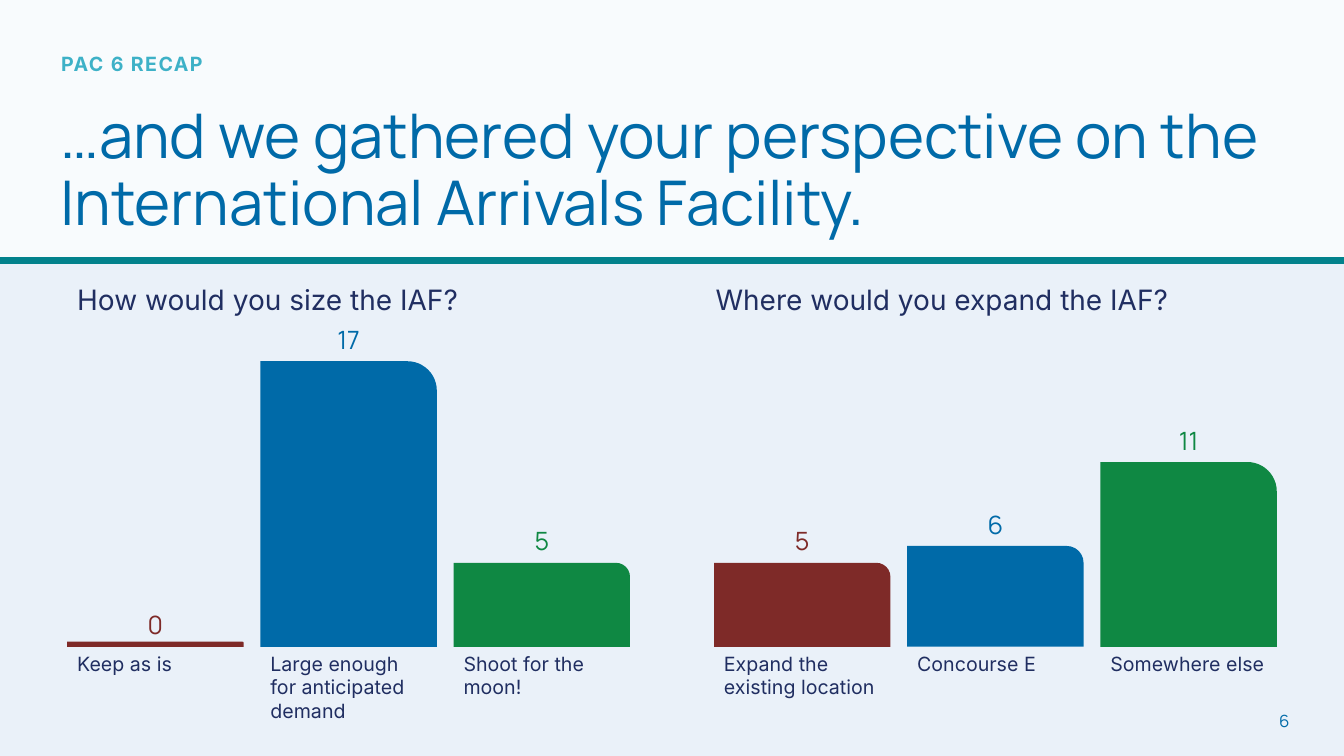
from dataclasses import dataclass

import lxml.etree
import pptx
import pptx.dml.color
import pptx.enum.shapes
import pptx.enum.text
import pptx.oxml
import pptx.oxml.ns
import pptx.util

COLORS = {
    "white": "FEFFFF", "panel": "EAF1F9", "teal": "02828C", "aqua": "3DB1C7",
    "navy": "202E61", "red": "7E2A28", "blue": "006AA8", "green": "0F8843",
}
SHAPE = pptx.enum.shapes.MSO_SHAPE
ALIGN = pptx.enum.text.PP_ALIGN
ANCHOR = pptx.enum.text.MSO_ANCHOR
COLS, ROWS = 160, 90
CELL = pptx.util.Inches(1) / 12
DIVIDER_ROW = 31
HEADING_ROW = 33
BASE_ROW = 77
BAR_COLS = 21
BAR_STEP = 23
ROWS_PER_VOTE = 2
MIN_BAR_ROWS = 0.6
VALUE_GAP = 5
LABEL_PAD, LABEL_LINE = 1.2, 2.84


@dataclass(frozen=True)
class Box:
    col: float
    row: float
    cols: float
    rows: float

    def emu(self) -> tuple[int, ...]:
        return tuple(round(n * CELL) for n in (self.col, self.row, self.cols, self.rows))


@dataclass(frozen=True)
class Style:
    size: int
    font: str
    color: str
    align: ALIGN = ALIGN.LEFT
    bold: bool = False
    line_spacing: float = 1.0
    tracking: int = 0
    grow: bool = False
    anchor: ANCHOR = ANCHOR.TOP


@dataclass(frozen=True)
class Bar:
    label: str
    label_lines: int
    votes: int
    color: str


@dataclass(frozen=True)
class Poll:
    question: str
    heading_col: int
    first_col: int
    bars: tuple[Bar, ...]


POLLS = (
    Poll("How would you size the IAF?", 8, 8, (
        Bar("Keep as is", 1, 0, "red"),
        Bar("Large enough for anticipated demand", 3, 17, "blue"),
        Bar("Shoot for the moon!", 2, 5, "green"),
    )),
    Poll("Where would you expand the IAF?", 84, 85, (
        Bar("Expand the existing location", 2, 5, "red"),
        Bar("Concourse E", 1, 6, "blue"),
        Bar("Somewhere else", 1, 11, "green"),
    )),
)


def rgb(name: str) -> pptx.dml.color.RGBColor:
    return pptx.dml.color.RGBColor.from_string(COLORS[name])


def add_block(slide, kind: SHAPE, box: Box, color: str, alpha: int = 100) -> None:
    sp = slide.shapes.add_shape(kind, *box.emu())
    sp.shadow.inherit = False
    sp.line.fill.background()
    sp.fill.solid()
    sp.fill.fore_color.rgb = rgb(color)
    if alpha < 100:
        clr = sp.fill._xPr.find(".//" + pptx.oxml.ns.qn("a:srgbClr"))
        lxml.etree.SubElement(clr, pptx.oxml.ns.qn("a:alpha"), val=str(alpha * 1000))


def add_text(slide, box: Box, text: str, style: Style) -> None:
    tf = slide.shapes.add_textbox(*box.emu()).text_frame
    tf.word_wrap = True
    tf.vertical_anchor = style.anchor
    if style.grow:
        tf.auto_size = pptx.enum.text.MSO_AUTO_SIZE.SHAPE_TO_FIT_TEXT
    tf.text = text
    p = tf.paragraphs[0]
    p.alignment = style.align
    p.line_spacing = style.line_spacing
    r = p.runs[0]
    r.font.size = pptx.util.Pt(style.size)
    r.font.name = style.font
    r.font.bold = style.bold
    r.font.color.rgb = rgb(style.color)
    if style.tracking:
        r.font._element.set("spc", str(style.tracking))


def add_divider(slide) -> None:
    y = round(DIVIDER_ROW * CELL)
    line = slide.shapes.add_connector(
        pptx.enum.shapes.MSO_CONNECTOR.STRAIGHT, 0, y, round(COLS * CELL), y)
    line.line.color.rgb = rgb("teal")
    line.line.width = pptx.util.Pt(4.5)
    lxml.etree.SubElement(line._element.spPr, pptx.oxml.ns.qn("a:effectLst"))


def add_bar(slide, col: int, bar: Bar) -> None:
    rows = max(bar.votes * ROWS_PER_VOTE, MIN_BAR_ROWS)
    add_block(slide, SHAPE.ROUND_1_RECTANGLE,
              Box(col, BASE_ROW - rows, BAR_COLS, rows), bar.color)
    value_row = BASE_ROW - bar.votes * ROWS_PER_VOTE - VALUE_GAP
    add_text(slide, Box(col, value_row, BAR_COLS, 4.8), str(bar.votes),
             Style(18, "Manrope", bar.color, ALIGN.CENTER, grow=True))
    add_text(slide, Box(col, BASE_ROW, BAR_COLS, LABEL_PAD + LABEL_LINE * bar.label_lines),
             bar.label, Style(14, "Inter", "navy", grow=True))


def add_poll(slide, poll: Poll) -> None:
    add_text(slide, Box(poll.heading_col, HEADING_ROW, 68, 5.28), poll.question,
             Style(20, "Inter", "navy", grow=True))
    for i, bar in enumerate(poll.bars):
        add_bar(slide, poll.first_col + i * BAR_STEP, bar)


def main() -> None:
    prs = pptx.Presentation()
    prs.slide_width, prs.slide_height = round(COLS * CELL), round(ROWS * CELL)
    slide = prs.slides.add_slide(prs.slide_layouts[6])
    slide.background.fill.solid()
    slide.background.fill.fore_color.rgb = rgb("white")

    add_block(slide, SHAPE.RECTANGLE, Box(0, 0, COLS, ROWS), "panel")
    add_block(slide, SHAPE.RECTANGLE, Box(0, 0, COLS, DIVIDER_ROW), "white", alpha=75)
    add_text(slide, Box(113, 83.4, 41.7, 4.8), "6",
             Style(12, "Manrope", "blue", ALIGN.RIGHT, anchor=ANCHOR.MIDDLE))
    add_text(slide, Box(6.1, 5.9, 78, 9.2), "PAC 6 RECAP",
             Style(14, "Inter", "aqua", bold=True, line_spacing=0.9, tracking=100))
    add_text(slide, Box(6, 12, 148, 9),
             "…and we gathered your perspective on the International Arrivals Facility.",
             Style(44, "Manrope", "blue", line_spacing=0.9))
    add_divider(slide)
    for poll in POLLS:
        add_poll(slide, poll)
    prs.save("out.pptx")


if __name__ == "__main__":
    main()
